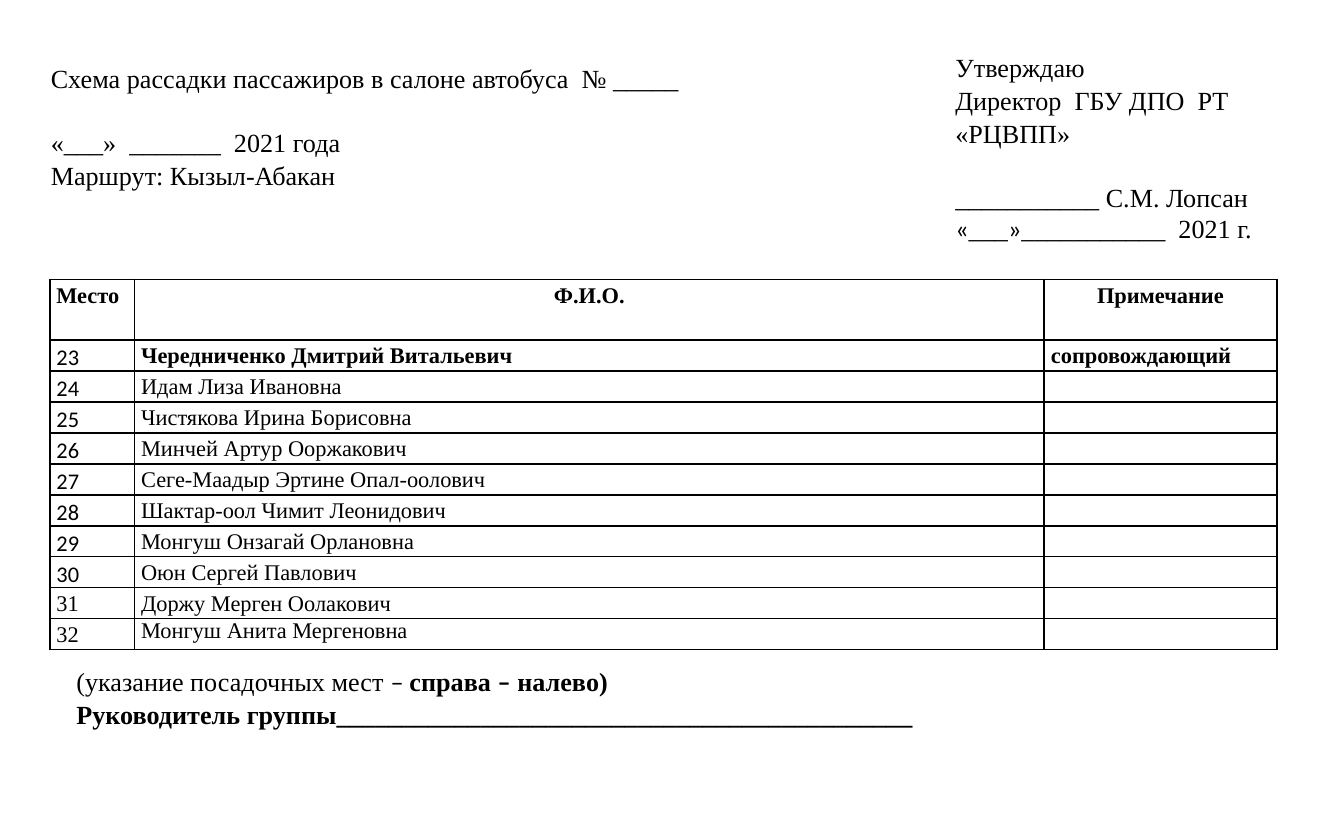
from lxml import etree
from pptx import Presentation
from pptx.dml.color import RGBColor
from pptx.enum import text
from pptx.oxml import ns
from pptx.util import Inches, Pt

SERIF, SANS = "Times New Roman", "Calibri"
BLACK = "000000"
LINE_GAP = 16.9

PASSENGERS = [
    "Чередниченко Дмитрий Витальевич",
    "Идам Лиза Ивановна",
    "Чистякова Ирина Борисовна",
    "Минчей Артур Ооржакович",
    "Сеге-Маадыр Эртине Опал-оолович",
    "Шактар-оол Чимит Леонидович",
    "Монгуш Онзагай Орлановна",
    "Оюн Сергей Павлович",
    "Доржу Мерген Оолакович",
    "Монгуш Анита Мергеновна",
]
FIRST_SEAT = 23
LAST_SANS_SEAT = 30


def color(value):
    return RGBColor.from_string(value)


def set_all(target, values):
    for name, value in values.items():
        setattr(target, name, value)


def add_run(paragraph, words, size, face=SERIF, bold=False):
    run = paragraph.add_run()
    run.text = words
    set_all(run.font, {"name": face, "size": Pt(size), "bold": bold})
    run.font.color.rgb = color(BLACK)


def add_note(slide, place, lines, top_inset=0.05):
    """Each line is (gap before in points, list of runs)."""
    frame = slide.shapes.add_textbox(*map(Inches, place)).text_frame
    set_all(frame, {"word_wrap": True, "margin_top": Inches(top_inset),
                    "vertical_anchor": text.MSO_ANCHOR.TOP})
    for index, (gap, runs) in enumerate(lines):
        paragraph = frame.paragraphs[0] if index == 0 else frame.add_paragraph()
        # Calibri lines are taller by themselves
        mixed = any(SANS in run for run in runs)
        paragraph.line_spacing = 1.0 if mixed else 1.05
        if gap:
            paragraph.space_before = Pt(gap)
        for run in runs:
            add_run(paragraph, run[0], 14, *run[1:])


def add_borders(cell):
    properties = cell._tc.get_or_add_tcPr()
    for index, side in enumerate(("lnL", "lnR", "lnT", "lnB")):
        line = etree.Element(ns.qn(f"a:{side}"), w=str(Pt(1)))
        fill = etree.SubElement(line, ns.qn("a:solidFill"))
        etree.SubElement(fill, ns.qn("a:srgbClr"), val=BLACK)
        properties.insert(index, line)


def fill_cell(cell, words, face=SERIF, bold=False, centered=False, spacing=1.15):
    set_all(cell, {"margin_left": Inches(0.05), "margin_right": Inches(0.05),
                   "margin_top": 0, "margin_bottom": 0})
    cell.fill.background()
    add_borders(cell)
    paragraph = cell.text_frame.paragraphs[0]
    if words:
        paragraph.line_spacing = spacing
        if centered:
            paragraph.alignment = text.PP_ALIGN.CENTER
        add_run(paragraph, words, 12, face, bold)
    else:
        # Keeps an empty cell from stretching its row
        etree.SubElement(paragraph._p, ns.qn("a:endParaRPr"), sz="1200")


def add_seating(slide):
    widths = [0.63, 6.77, 1.73]
    heights = [0.45] + [0.23] * len(PASSENGERS)
    seating = slide.shapes.add_table(
        len(heights), len(widths), Inches(0.37), Inches(2.08),
        Inches(sum(widths)), Inches(sum(heights))).table
    set_all(seating, {"first_row": False, "horz_banding": False})
    for column, width in zip(seating.columns, widths):
        column.width = Inches(width)
    for row, height in zip(seating.rows, heights):
        row.height = Inches(height)

    # Heading row
    for index, heading in enumerate(("Место", "Ф.И.О.", "Примечание")):
        fill_cell(seating.cell(0, index), heading, bold=True, centered=index > 0)

    # One row per passenger; the first one accompanies the group
    for row, name in enumerate(PASSENGERS, 1):
        seat = FIRST_SEAT + row - 1
        escort = row == 1
        fill_cell(seating.cell(row, 0), str(seat),
                  SANS if seat <= LAST_SANS_SEAT else SERIF)
        fill_cell(seating.cell(row, 1), name, bold=escort,
                  spacing=1.0 if row == len(PASSENGERS) else 1.15)
        fill_cell(seating.cell(row, 2), "сопровождающий" if escort else "",
                  bold=escort)


def main():
    deck = Presentation()
    set_all(deck, {"slide_width": Inches(10), "slide_height": Inches(6.25)})
    slide = deck.slides.add_slide(deck.slide_layouts[6])

    # Trip heading
    add_note(slide, (0.28, 0.05, 5.04, 1.51), [
        (0, [("Схема рассадки пассажиров в салоне автобуса  № _____",)]),
        (LINE_GAP, [("«___»  _______  2021 года",)]),
        (0, [("Маршрут: Кызыл-Абакан",)]),
    ], top_inset=0.4)

    # Footer with signature line
    add_note(slide, (0.47, 4.9, 9.53, 0.57), [
        (0, [("(указание посадочных мест ",), ("– ", SANS),
             ("справа ", SERIF, True), ("–", SANS, True),
             (" налево)", SERIF, True)]),
        (0, [("Руководитель группы" + "_" * 44, SERIF, True)]),
    ])

    add_seating(slide)

    # Approval block
    add_note(slide, (7.01, 0.32, 2.5, 1.51), [
        (0, [("Утверждаю",)]),
        (0, [("Директор  ГБУ ДПО  РТ «РЦВПП»",)]),
        (LINE_GAP, [("___________ С.М. Лопсан",)]),
        (0, [("«", SANS), ("___",), ("»", SANS), ("___________  2021 г.",)]),
    ])

    deck.save("out.pptx")


if __name__ == "__main__":
    main()
